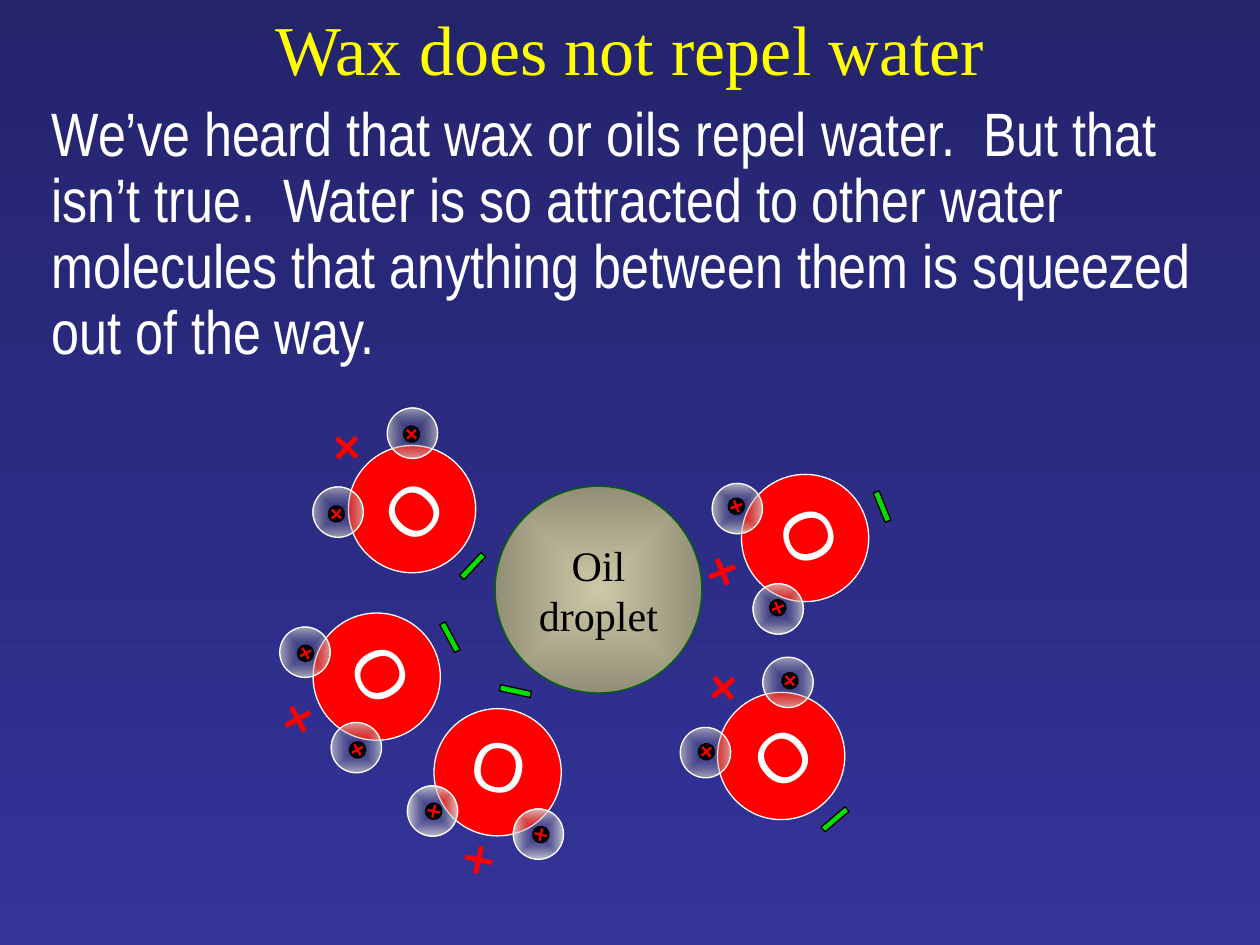
from dataclasses import dataclass
from math import cos, radians, sin

from lxml import etree
from pptx import Presentation
from pptx.dml.color import RGBColor
from pptx.enum.shapes import MSO_SHAPE
from pptx.enum.text import MSO_ANCHOR, PP_ALIGN
from pptx.oxml.ns import qn
from pptx.util import Inches, Pt

OVAL, PLUS, BAR = MSO_SHAPE.OVAL, MSO_SHAPE.CROSS, MSO_SHAPE.RECTANGLE
LEFT, CENTER = PP_ALIGN.LEFT, PP_ALIGN.CENTER
TOP, MIDDLE = MSO_ANCHOR.TOP, MSO_ANCHOR.MIDDLE


@dataclass(frozen=True)
class Theme:
    serif: str = "Times New Roman"
    narrow: str = "Arial Narrow"
    sans: str = "Arial"
    title_size: int = 40
    body_size: int = 35
    atom_size: int = 40
    oil_size: int = 24
    outline: float = 0.75
    yellow: str = "FFFF00"
    white: str = "FFFFFF"
    black: str = "000000"
    red: str = "FF0000"
    green: str = "00E000"
    dark_green: str = "006600"
    # Gradient stops: position, colour, colour modifiers in thousandths of a percent
    night: tuple = ((0, "333399", {"shade": 46275}), (100, "333399", {}))
    oil: tuple = ((0, "CDC8A7", {}), (100, "CDC8A7", {"shade": 46275}))
    glass: tuple = ((0, "666666", {"alpha": 0}), (100, "FFFFFF", {}))


THEME = Theme()

# Molecule parts, as centre offsets from the oxygen before it is turned
HYDROGENS = ((0.42, -0.41), (-0.44, -0.41))
NUCLEI = ((-0.43, -0.41), (0.44, -0.41))
POSITIVE_POLE = (0, -0.71)
NEGATIVE_POLE = (0, 0.66)

# Oxygen centre x, y, rotation, flipped
LOWER_MOLECULES = ((6.2, 6, 319.6, False), (3.95, 6.13, 12.3, True))
UPPER_MOLECULES = ((2.99, 5.37, 61.7, True), (6.39, 4.27, 247.8, False),
                   (3.27, 4.04, 133.3, True))


def set_gradient(fill, parent, stops, angle=None):
    """Fill with a linear gradient at an angle, or from the centre outwards."""
    fill.solid()
    gradient = etree.Element(qn("a:gradFill"), rotWithShape="1")
    stop_list = etree.SubElement(gradient, qn("a:gsLst"))
    for position, color, modifiers in stops:
        stop = etree.SubElement(stop_list, qn("a:gs"), pos=str(position * 1000))
        rgb = etree.SubElement(stop, qn("a:srgbClr"), val=color)
        for name, value in modifiers.items():
            etree.SubElement(rgb, qn("a:" + name), val=str(value))
    if angle is None:
        way = etree.SubElement(gradient, qn("a:path"), path="shape")
        sides = dict.fromkeys("ltrb", "50000")
        etree.SubElement(way, qn("a:fillToRect"), **sides)
    else:
        etree.SubElement(gradient, qn("a:lin"), ang=str(angle * 60000), scaled="1")
    parent.replace(parent.find(qn("a:solidFill")), gradient)


def write_text(shape, text, size, font, color, align=CENTER, anchor=MIDDLE,
               wrap=False, **spacing):
    frame = shape.text_frame
    frame.word_wrap, frame.vertical_anchor = wrap, anchor
    para = frame.paragraphs[0]
    para.text = text
    para.alignment = align
    for name, value in spacing.items():
        setattr(para, name, value)
    for span in para.runs:
        for name, value in {"size": Pt(size), "name": font}.items():
            setattr(span.font, name, value)
        span.font.color.rgb = RGBColor.from_string(color)


def add_part(shapes, kind, center, size, fill, line=None):
    """Add a shape by its centre; fill is a colour or gradient stops."""
    (x, y), (width, height) = center, size
    part = shapes.add_shape(kind, Inches(x - width / 2), Inches(y - height / 2),
                            Inches(width), Inches(height))
    part.shadow.inherit = False
    if isinstance(fill, str):
        part.fill.solid()
        part.fill.fore_color.rgb = RGBColor.from_string(fill)
    else:
        set_gradient(part.fill, part._element.spPr, fill)
    if line:
        part.line.color.rgb = RGBColor.from_string(line)
        part.line.width = Pt(THEME.outline)
    else:
        part.line.fill.background()
    if kind == PLUS:
        part.adjustments[0] = 0.41
    return part


def add_molecule(page, x, y, rotation, flipped):
    """Draw a water molecule with its poles, turned about the oxygen."""
    shapes = page.shapes.add_group_shape().shapes
    turn = radians(rotation)

    def add_turned(kind, offset, size, fill, line=None):
        across, down = offset
        down = -down if flipped else down
        center = (x + across * cos(turn) - down * sin(turn),
                  y + across * sin(turn) + down * cos(turn))
        part = add_part(shapes, kind, center, size, fill, line)
        part.rotation = rotation
        if flipped:
            part._element.spPr.xfrm.set("flipV", "1")
        return part

    oxygen = add_turned(OVAL, (0, 0), (1.01, 1.01), THEME.red, THEME.white)
    write_text(oxygen, "O", THEME.atom_size, THEME.sans, THEME.white)
    for offset in HYDROGENS:
        add_turned(OVAL, offset, (0.4, 0.4), THEME.glass, THEME.white)
    for offset in NUCLEI:
        add_turned(OVAL, offset, (0.14, 0.14), THEME.black)
        add_turned(PLUS, offset, (0.1, 0.1), THEME.red)
    add_turned(PLUS, POSITIVE_POLE, (0.22, 0.22), THEME.red)
    add_turned(BAR, NEGATIVE_POLE, (0.25, 0.05), THEME.green, THEME.black)


def add_oil_droplet(page, center, diameter):
    droplet = add_part(page.shapes, OVAL, center, (diameter, diameter),
                       THEME.oil, THEME.dark_green)
    write_text(droplet, "Oil\vdroplet", THEME.oil_size, THEME.serif, THEME.black)


def add_title(page, *box):
    title = page.shapes.add_textbox(*map(Inches, box))
    write_text(title, "Wax does not repel water", THEME.title_size,
               THEME.serif, THEME.yellow, wrap=True)


def add_body(page, *box):
    body = page.shapes.add_textbox(*map(Inches, box))
    text = ("We’ve heard that wax or oils repel water.  But that isn’t true.  "
            "Water is so attracted to other water molecules that anything "
            "between them is squeezed out of the way.")
    write_text(body, text, THEME.body_size, THEME.narrow, THEME.white, LEFT, TOP,
               wrap=True, line_spacing=0.9, space_before=Pt(7))


def main():
    deck = Presentation()
    deck.slide_width, deck.slide_height = Inches(10), Inches(7.5)
    page = deck.slides.add_slide(deck.slide_layouts[6])
    backdrop = page.background.fill
    backdrop.solid()
    set_gradient(backdrop, page._element.find(".//" + qn("p:bgPr")),
                 THEME.night, angle=90)
    add_title(page, 0.75, 0, 8.5, 0.75)
    add_body(page, 0.31, 0.77, 9.69, 2.39)
    for molecule in LOWER_MOLECULES:
        add_molecule(page, *molecule)
    add_oil_droplet(page, (4.75, 4.68), 1.64)
    for molecule in UPPER_MOLECULES:
        add_molecule(page, *molecule)
    deck.save("out.pptx")


if __name__ == "__main__":
    main()
